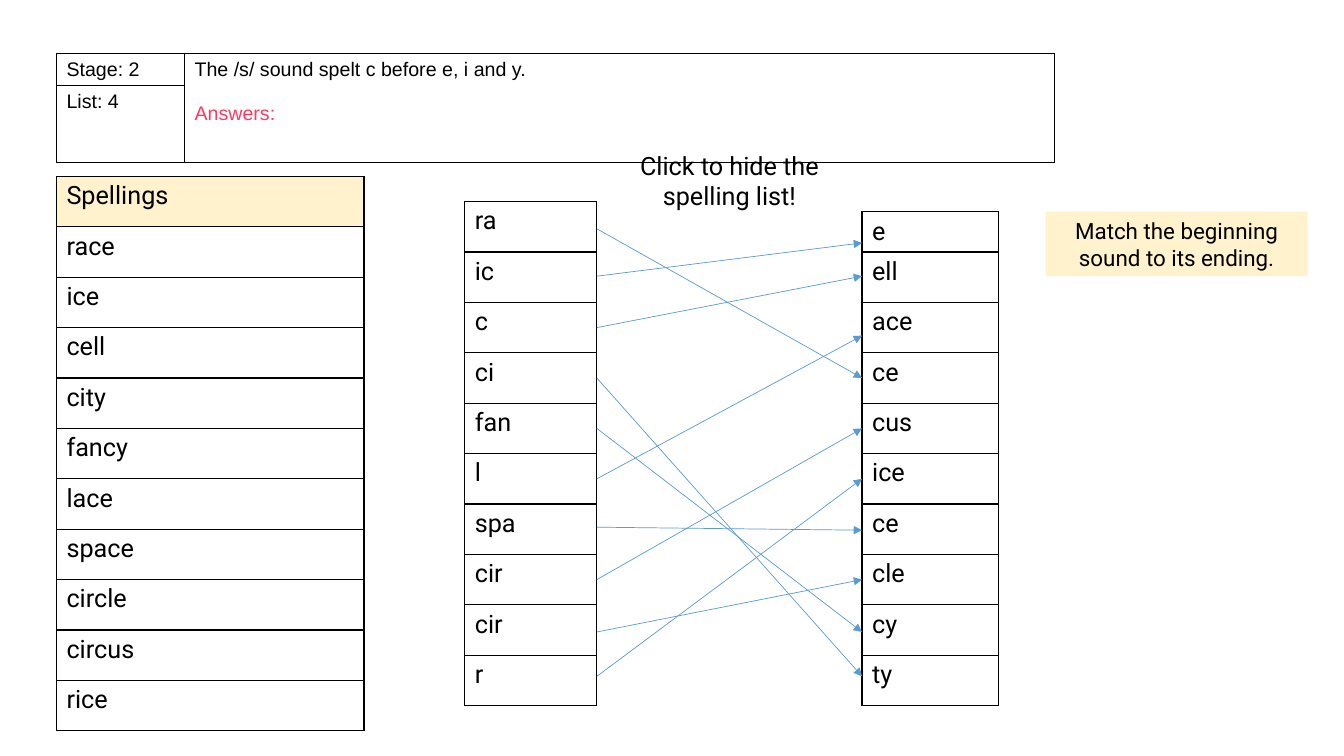
from dataclasses import dataclass

from lxml.etree import SubElement
from pptx import Presentation
from pptx.dml.color import RGBColor
from pptx.enum.shapes import MSO_CONNECTOR, MSO_SHAPE
from pptx.enum.text import PP_ALIGN
from pptx.oxml import parse_xml
from pptx.oxml.ns import nsdecls, qn
from pptx.util import Inches, Pt


@dataclass(frozen=True)
class Theme:
    """Colours, fonts and type sizes of the slide."""
    ink: str = "000000"
    cream: str = "FFF2CC"
    answer: str = "FF3860"
    arrow: str = "5B9BD5"
    body_font: str = "Roboto"
    header_font: str = "Arial"
    list_size: int = 18
    note_size: int = 16
    header_size: int = 14
    border: float = 1
    arrow_width: float = 0.5


THEME = Theme()
SPELLINGS = ["race", "ice", "cell", "city", "fancy", "lace", "space",
             "circle", "circus", "rice"]
BEGINNINGS = ["ra", "ic", "c", "ci", "fan", "l", "spa", "cir", "cir", "r"]
ENDINGS = ["e", "ell", "ace", "ce", "cus", "ice", "ce", "cle", "cy", "ty"]
MATCHES = [(2.27, 3.75), (2.74, 2.41), (3.25, 2.74), (3.75, 6.71),
           (4.25, 6.27), (4.75, 3.33), (5.23, 5.26), (5.75, 4.25),
           (6.27, 5.75), (6.71, 4.75)]
ROW = 0.5


def add_text(p, text, size=THEME.list_size, font=THEME.body_font,
             color=THEME.ink, align=PP_ALIGN.LEFT, before=0):
    """Write one formatted run into a paragraph."""
    p.alignment = align
    if before:
        p.space_before = Pt(before)
    r = p.add_run()
    r.text = text
    r.font.size = Pt(size)
    r.font.name = font
    r.font.bold = False
    r.font.color.rgb = RGBColor.from_string(color)


def style_cell(cell, fill=None):
    """Give a cell its fill and four black borders."""
    if fill:
        cell.fill.solid()
        cell.fill.fore_color.rgb = RGBColor.from_string(fill)
    else:
        cell.fill.background()
    tcPr = cell._tc.get_or_add_tcPr()
    for i, side in enumerate("LRTB"):
        tcPr.insert(i, parse_xml(
            f'<a:ln{side} {nsdecls("a")} w="{Pt(THEME.border)}"><a:solidFill>'
            f'<a:srgbClr val="{THEME.ink}"/></a:solidFill></a:ln{side}>'))


def add_grid(s, left, top, widths, heights):
    """Add a plain table with the given column widths and row heights."""
    table = s.shapes.add_table(
        len(heights), len(widths), Inches(left), Inches(top),
        Inches(sum(widths)), Inches(sum(heights))).table
    table.first_row = table.horz_banding = False
    for column, width in zip(table.columns, widths):
        column.width = Inches(width)
    for row, height in zip(table.rows, heights):
        row.height = Inches(height)
    for cell in table.iter_cells():
        style_cell(cell)
    return table


def add_header(s, left, top):
    """Add the stage, list and rule table."""
    table = add_grid(s, left, top, [1.27, 8.63], [0.32, 0.75])
    table.cell(0, 1).merge(table.cell(1, 1))
    fmt = dict(size=THEME.header_size, font=THEME.header_font)
    for i, label in enumerate(["Stage: 2", "List: 4"]):
        add_text(table.cell(i, 0).text_frame.paragraphs[0], label, **fmt)
    tf = table.cell(0, 1).text_frame
    add_text(tf.paragraphs[0], "The /s/ sound spelt c before e, i and y.", **fmt)
    add_text(tf.add_paragraph(), "Answers:", color=THEME.answer, before=16, **fmt)


def add_word_list(s, left, top, width, words, title=None, first_row=ROW):
    """Add a one-column word list with an optional shaded title."""
    words = [title] + words if title else words
    heights = [first_row] + [ROW] * (len(words) - 1)
    table = add_grid(s, left, top, [width], heights)
    for i, word in enumerate(words):
        add_text(table.cell(i, 0).text_frame.paragraphs[0], word)
    if title:
        cell = table.cell(0, 0)
        cell.fill.solid()
        cell.fill.fore_color.rgb = RGBColor.from_string(THEME.cream)


def add_note(s, left, top, width, height, text, size, fill=None):
    """Add a centred note, shaded when a fill is given."""
    box = [Inches(v) for v in (left, top, width, height)]
    if fill:
        sp = s.shapes.add_shape(MSO_SHAPE.RECTANGLE, *box)
        sp.shadow.inherit = False
        sp.fill.solid()
        sp.fill.fore_color.rgb = RGBColor.from_string(fill)
        sp.line.fill.background()
    else:
        sp = s.shapes.add_textbox(*box)
    tf = sp.text_frame
    tf.word_wrap = True
    add_text(tf.paragraphs[0], text, size=size, align=PP_ALIGN.CENTER)


def add_matches(s, left, right, matches):
    """Draw an arrow from each beginning to its ending."""
    for start, end in matches:
        line = s.shapes.add_connector(
            MSO_CONNECTOR.STRAIGHT, Inches(left), Inches(start),
            Inches(right), Inches(end))
        line.line.color.rgb = RGBColor.from_string(THEME.arrow)
        line.line.width = Pt(THEME.arrow_width)
        SubElement(line.line._get_or_add_ln(), qn("a:tailEnd"), type="triangle")
        SubElement(line._element.spPr, qn("a:effectLst"))


def main():
    """Build and save the spelling slide."""
    prs = Presentation()
    prs.slide_width, prs.slide_height = Inches(13.33), Inches(7.5)
    s = prs.slides.add_slide(prs.slide_layouts[6])
    add_word_list(s, 0.56, 1.75, 3.05, SPELLINGS, title="Spellings")
    add_header(s, 0.56, 0.53)
    add_word_list(s, 4.61, 2, 1.31, BEGINNINGS)
    add_word_list(s, 8.55, 2.1, 1.35, ENDINGS, first_row=0.4)
    add_note(s, 10.37, 2.1, 2.6, 0.64, "Match the beginning sound to its ending.",
             THEME.note_size, fill=THEME.cream)
    add_note(s, 6.01, 1.44, 2.45, 0.71, "Click to hide the spelling list!",
             THEME.list_size)
    add_matches(s, 5.92, 8.55, MATCHES)
    prs.save("out.pptx")


if __name__ == "__main__":
    main()
